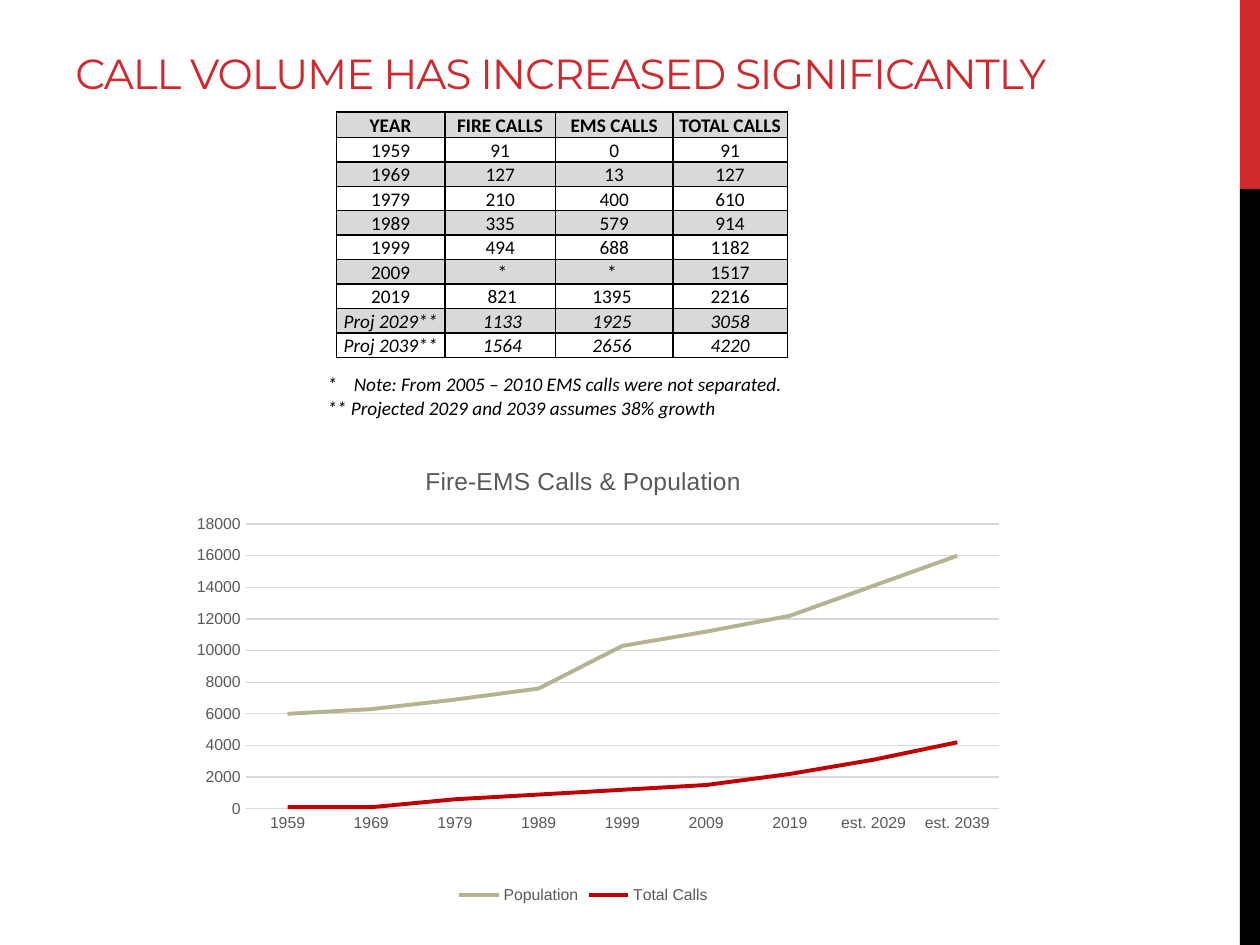
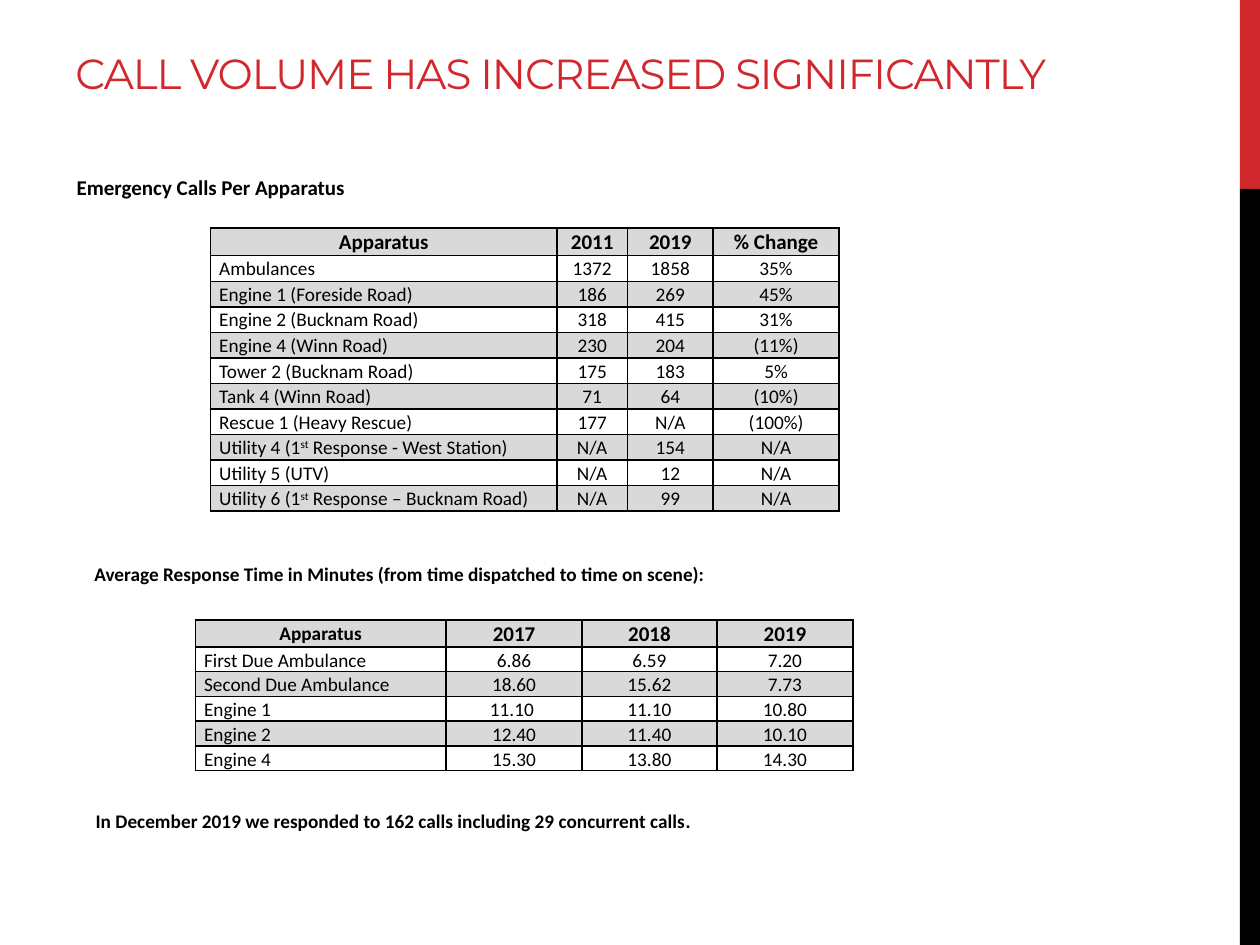
from lxml import etree
from pptx import Presentation
from pptx.chart.data import CategoryChartData
from pptx.dml.color import RGBColor
from pptx.enum.chart import XL_CHART_TYPE, XL_LEGEND_POSITION, XL_TICK_MARK
from pptx.enum.shapes import MSO_SHAPE
from pptx.enum.text import MSO_ANCHOR, PP_ALIGN
from pptx.oxml import parse_xml
from pptx.oxml.ns import nsdecls, qn
from pptx.util import Inches, Pt

LINE = XL_CHART_TYPE.LINE
BOTTOM_LEGEND = XL_LEGEND_POSITION.BOTTOM
NO_TICK = XL_TICK_MARK.NONE
RECTANGLE = MSO_SHAPE.RECTANGLE
TOP, MIDDLE, BOTTOM = MSO_ANCHOR.TOP, MSO_ANCHOR.MIDDLE, MSO_ANCHOR.BOTTOM
LEFT, CENTER = PP_ALIGN.LEFT, PP_ALIGN.CENTER

# Shared look
RED, BLACK, SHADE = "D1282E", "000000", "D9D9D9"
CHART_TEXT, CHART_GRID = "595959", "D9D9D9"
BODY_FONT, TITLE_FONT, CHART_FONT = "Calibri", "Montserrat", "Arial"
SIDE_BANDS = [(0, 1.5, RED), (1.5, 6, BLACK)]  # top, height, colour
TITLE = "CALL VOLUME HAS INCREASED SIGNIFICANTLY"

# Slide 1 content
CALLS = [
    ("YEAR", "FIRE CALLS", "EMS CALLS", "TOTAL CALLS"),
    ("1959", "91", "0", "91"),
    ("1969", "127", "13", "127"),
    ("1979", "210", "400", "610"),
    ("1989", "335", "579", "914"),
    ("1999", "494", "688", "1182"),
    ("2009", " *", "* ", "1517"),
    ("2019", " 821", "1395 ", "2216"),
    ("Proj 2029**", " 1133", "1925 ", "3058"),
    ("Proj 2039**", " 1564", "2656 ", "4220"),
]
NOTES = ["*\tNote: From 2005 – 2010 EMS calls were not separated.",
         "** Projected 2029 and 2039 assumes 38% growth"]
GROWTH_TITLE = "Fire-EMS Calls & Population"
GROWTH_YEARS = ["1959", "1969", "1979", "1989", "1999", "2009", "2019",
                "est. 2029", "est. 2039"]
GROWTH = [  # name, colour, values
    ("Population", "B4B392",
     [6000, 6300, 6900, 7600, 10300, 11200, 12200, 14100, 16000]),
    ("Total Calls", "C00000",
     [100, 100, 600, 900, 1200, 1500, 2200, 3100, 4200]),
]
CHART_SIZE = (6.92, 3.67)

# Slide 2 content; ^ encloses superscript
APPARATUS_CALLS = [
    ("Apparatus", "2011", "2019", "% Change"),
    ("Ambulances", "1372", "1858", "35%"),
    ("Engine 1 (Foreside Road)", "186", "269", "45%"),
    ("Engine 2 (Bucknam Road)", "318", "415", "31%"),
    ("Engine 4 (Winn Road)", "230", "204", "(11%)"),
    ("Tower 2 (Bucknam Road)", "175", "183", "5%"),
    ("Tank 4 (Winn Road)", "71", "64", "(10%)"),
    ("Rescue 1 (Heavy Rescue)", "177", "N/A", "(100%)"),
    ("Utility 4 (1^st^ Response - West Station)", "N/A", "154", "N/A"),
    ("Utility 5 (UTV)", "N/A", "12", "N/A"),
    ("Utility 6 (1^st^ Response – Bucknam Road)", "N/A", "99", "N/A"),
]
RESPONSE_TIMES = [
    ("Apparatus", "2017", "2018", "2019"),
    ("First Due Ambulance", "6.86", "6.59", "7.20"),
    ("Second Due Ambulance", "18.60", "15.62", "7.73"),
    ("Engine 1", "11.10 ", "11.10", "10.80"),
    ("Engine 2", "12.40", "11.40", "10.10"),
    ("Engine 4", "15.30", "13.80", "14.30"),
]
STATEMENTS = [  # left, top, size, text, italic ending
    (0.51, 1.34, 12, "Emergency Calls Per Apparatus", ""),
    (0.65, 4.41, 11, "Average Response Time in Minutes "
                     "(from time dispatched to time on scene):", ""),
    (0.66, 6.37, 11, "In December 2019 we responded to 162 calls "
                     "including 29 concurrent calls", "."),
]

# Table layouts; heights are the header's and the whole table's
CALLS_LAYOUT = dict(at=(2.67, 0.89), widths=(0.86, 0.88, 0.93, 0.91),
                    heights=(0.2, 1.95), header_sizes=(11, 11, 11, 11),
                    margins=(0.01, 0.01, 0.01, 0), anchor=MIDDLE,
                    first_align=CENTER, spacing=1.0)
APPARATUS_LAYOUT = dict(at=(1.67, 1.81), widths=(2.75, 0.56, 0.68, 1),
                        heights=(0.22, 2.25), header_sizes=(12, 12, 12, 12),
                        margins=(0.07, 0, 0.07, 0), anchor=TOP,
                        first_align=LEFT, spacing=1.07)
RESPONSE_LAYOUT = dict(APPARATUS_LAYOUT, at=(1.55, 4.92),
                       widths=(1.99, 1.08, 1.07, 1.08),
                       heights=(0.21, 1.19), header_sizes=(11, 12, 12, 12))


def rgb(color):
    return RGBColor.from_string(color)


def style_font(font, color=BLACK, **values):
    for name, value in values.items():
        setattr(font, name, value)
    font.color.rgb = rgb(color)


def add_text(slide, box, lines, anchor=TOP, spacing=1.0, **style):
    """Text box with one paragraph per line; returns its paragraphs."""
    frame = slide.shapes.add_textbox(*map(Inches, box)).text_frame
    frame.word_wrap = True
    frame.vertical_anchor = anchor
    frame.text = "\n".join(lines)
    for paragraph in frame.paragraphs:
        paragraph.line_spacing = spacing
        style_font(paragraph.runs[0].font, **style)
    return frame.paragraphs


def add_base_slide(deck):
    """Blank slide with the side bands and the title."""
    slide = deck.slides.add_slide(deck.slide_layouts[6])
    for top, height, color in SIDE_BANDS:
        band = slide.shapes.add_shape(
            RECTANGLE, *map(Inches, (9.84, top, 0.16, height)))
        band.shadow.inherit = False
        band.fill.solid()
        band.fill.fore_color.rgb = rgb(color)
        band.line.fill.background()
    title, = add_text(slide, (0.5, 0.16, 9, 0.67), [TITLE], anchor=BOTTOM,
                      color=RED, name=TITLE_FONT, size=Pt(24))
    title.runs[0]._r.get_or_add_rPr().set("spc", "-60")
    return slide


def add_borders(cell):
    properties = cell._tc.get_or_add_tcPr()
    for side in ("lnL", "lnR", "lnT", "lnB"):
        border = etree.SubElement(properties, qn(f"a:{side}"), w=str(Pt(1)))
        fill = etree.SubElement(border, qn("a:solidFill"))
        etree.SubElement(fill, qn("a:srgbClr"), val=BLACK)


def add_grid(slide, rows, at, widths, heights, header_sizes, margins, anchor,
             first_align, spacing):
    """Bordered table, shaded on every other row from the header on."""
    header_height, total = heights
    row_height = (total - header_height) / (len(rows) - 1)
    table = slide.shapes.add_table(
        len(rows), len(widths),
        *map(Inches, (*at, sum(widths), total))).table
    table.first_row = table.horz_banding = False
    for column, width in zip(table.columns, widths):
        column.width = Inches(width)
    for r, values in enumerate(rows):
        header = r == 0
        table.rows[r].height = Inches(header_height if header else row_height)
        for c, value in enumerate(values):
            cell = table.cell(r, c)
            add_borders(cell)
            if r % 2 == 0:
                cell.fill.solid()
                cell.fill.fore_color.rgb = rgb(SHADE)
            else:
                cell.fill.background()
            for side, margin in zip(("left", "top", "right", "bottom"), margins):
                setattr(cell, f"margin_{side}", Inches(margin))
            cell.vertical_anchor = anchor
            paragraph = cell.text_frame.paragraphs[0]
            paragraph.alignment = CENTER if header or c else first_align
            paragraph.line_spacing = spacing
            for i, part in enumerate(value.split("^")):
                run = paragraph.add_run()
                run.text = part
                style_font(run.font, name=BODY_FONT, bold=header,
                           size=Pt(header_sizes[c] if header else 11),
                           italic=values[0].startswith("Proj"))
                if i % 2:
                    run._r.get_or_add_rPr().set("baseline", "30000")


def manual_layout(left, top, *size):
    """Chart layout from inches within the chart."""
    modes = {"xMode": "edge", "yMode": "edge"}
    if size:
        modes = {"layoutTarget": "inner", **modes}
    fractions = [length / whole for length, whole
                 in zip((left, top, *size), CHART_SIZE * 2)]
    places = {**modes, **dict(zip("xywh", fractions))}
    parts = "".join(f'<c:{tag} val="{value}"/>' for tag, value in places.items())
    return parse_xml(f'<c:layout {nsdecls("c")}><c:manualLayout>{parts}'
                     '</c:manualLayout></c:layout>')


def add_growth_chart(slide):
    growth = CategoryChartData()
    growth.categories = GROWTH_YEARS
    for name, _, values in GROWTH:
        growth.add_series(name, values)
    chart = slide.shapes.add_chart(
        LINE, *map(Inches, (1.17, 3.55, *CHART_SIZE)), growth).chart
    small = dict(color=CHART_TEXT, name=CHART_FONT, size=Pt(9))
    style_font(chart.font, name=CHART_FONT, size=Pt(10))

    # Title and plot position
    chart.has_title = True
    heading = chart.chart_title.text_frame
    heading.text = GROWTH_TITLE
    style_font(heading.paragraphs[0].runs[0].font, color=CHART_TEXT,
               name=CHART_FONT, size=Pt(14), bold=False)
    title_xml = chart.chart_title._element
    plot_area = chart._chartSpace.chart.plotArea
    for parent in (title_xml, plot_area):
        for automatic in parent.findall(qn("c:layout")):
            parent.remove(automatic)
    title_xml.find(qn("c:tx")).addnext(manual_layout(2.17, 0.11))
    plot_area.insert(0, manual_layout(0.78, 0.61, 5.98, 2.26))

    # Legend
    chart.has_legend = True
    chart.legend.position = BOTTOM_LEGEND
    chart.legend.include_in_layout = False
    style_font(chart.legend.font, **small)

    # Axes
    years, counts = chart.category_axis, chart.value_axis
    for axis in (years, counts):
        axis.major_tick_mark = axis.minor_tick_mark = NO_TICK
        style_font(axis.tick_labels.font, **small)
    counts.minimum_scale, counts.maximum_scale = 0, 18000
    counts.major_unit = 2000
    counts.has_major_gridlines = True
    counts.format.line.fill.background()
    for rule in (years.format.line, counts.major_gridlines.format.line):
        rule.color.rgb = rgb(CHART_GRID)
        rule.width = Pt(0.75)

    # Lines
    chart.plots[0].vary_by_categories = False
    for series, (_, color, _) in zip(chart.plots[0].series, GROWTH):
        series.smooth = False
        series.format.line.color.rgb = rgb(color)
        series.format.line.width = Pt(2.25)


def main():
    deck = Presentation()
    deck.slide_width, deck.slide_height = Inches(10), Inches(7.5)

    # Slide 1: call history and growth
    history = add_base_slide(deck)
    notes = add_text(history, (2.5, 2.89, 5.33, 0.49), NOTES, spacing=1.07,
                     name=BODY_FONT, size=Pt(11), italic=True)
    hang = Inches(0.21)
    for note in notes:
        properties = note._p.get_or_add_pPr()
        properties.set("marL", str(hang))
        properties.set("indent", str(-hang))
    add_grid(history, CALLS, **CALLS_LAYOUT)
    add_growth_chart(history)

    # Slide 2: calls and response times per apparatus
    apparatus = add_base_slide(deck)
    add_grid(apparatus, APPARATUS_CALLS, **APPARATUS_LAYOUT)
    for left, top, size, text, ending in STATEMENTS:
        style = dict(name=BODY_FONT, size=Pt(size), bold=True)
        statement, = add_text(apparatus, (left, top, 6.42, 0.3), [text], **style)
        if ending:
            run = statement.add_run()
            run.text = ending
            style_font(run.font, italic=True, **style)
    add_grid(apparatus, RESPONSE_TIMES, **RESPONSE_LAYOUT)

    deck.save("out.pptx")


if __name__ == "__main__":
    main()
